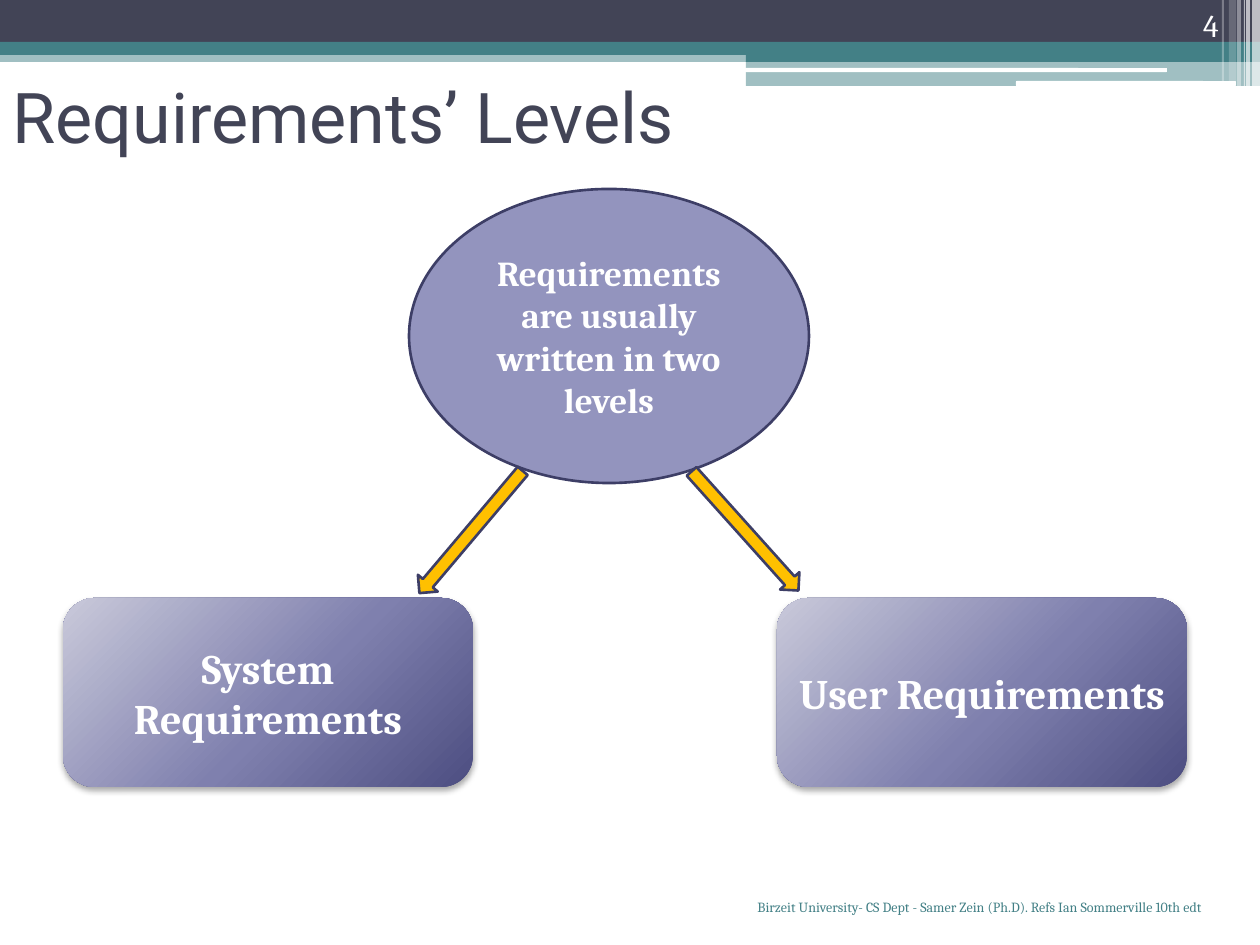
"""Build the slide that introduces the two levels of requirements."""
from typing import NamedTuple, Optional

from lxml import etree
from pptx import Presentation
from pptx import util as u
from pptx.dml.color import RGBColor
from pptx.enum import shapes, text
from pptx.oxml import parse_xml
from pptx.oxml.ns import nsdecls, qn

PX = 914400 / 126
COLORS = {
    "ink": "424456", "teal": "438086", "white": "FFFFFF", "lilac": "9394BE",
    "outline": "3D3E66", "amber": "FFC000", "shadow": "000000",
    "light": "C9C9DA", "middle": "7F80AE", "dark": "4D4E81",
}
KIND = shapes.MSO_SHAPE
ALIGN = text.PP_ALIGN
ANCHOR = text.MSO_ANCHOR


class Area(NamedTuple):
    left: int
    top: int
    width: int
    height: int


class Band(NamedTuple):
    area: Area
    color: str
    opacity: int = 100
    kind: KIND = KIND.RECTANGLE


class Arrow(NamedTuple):
    area: Area
    rotation: float


class Level(NamedTuple):
    left: int
    label: str


BANDS = [
    Band(Area(0, 50, 1260, 12), "teal", 50),
    Band(Area(0, 0, 1260, 42), "ink"),
    Band(Area(0, 42, 1260, 13), "teal"),
    Band(Area(746, 49, 514, 13), "teal"),
    Band(Area(746, 61, 514, 25), "teal", 50),
    Band(Area(745, 68, 422, 4), "white", kind=KIND.ROUNDED_RECTANGLE),
    Band(Area(1016, 81, 220, 5), "white", kind=KIND.ROUNDED_RECTANGLE),
    Band(Area(1252, 0, 8, 86), "white", 65),
    Band(Area(1246, 0, 4, 86), "white", 65),
    Band(Area(1244, 0, 1, 86), "white", 60),
    Band(Area(1237, 0, 4, 86), "white", 40),
    Band(Area(1229, 0, 7, 81), "white", 20),
    Band(Area(1222, 0, 2, 81), "white", 30),
]
ARROWS = [Arrow(Area(391, 519, 160, 26), 130.2),
          Arrow(Area(665, 518, 160, 26), 48.1)]
LEVELS = [Level(63, "System Requirements"), Level(777, "User Requirements")]
STOPS = [(0, "light"), (55, "middle"), (100, "dark")]


def emu(area: Area) -> list:
    return [u.Emu(round(length * PX)) for length in area]


def rgb(name: str) -> RGBColor:
    return RGBColor.from_string(COLORS[name])


def write(box, content: str, *, size: int, color: str = "white",
          font: str = "Cambria", bold: bool = False, align=ALIGN.CENTER,
          anchor=ANCHOR.MIDDLE) -> None:
    frame = box.text_frame
    frame.word_wrap = True
    frame.auto_size = text.MSO_AUTO_SIZE.NONE
    frame.vertical_anchor = anchor
    para = frame.paragraphs[0]
    para.alignment = align
    span = para.add_run()
    span.text = content
    span.font.name = font
    span.font.size = u.Pt(size)
    span.font.bold = bold
    span.font.color.rgb = rgb(color)


def add_shape(page, kind, area: Area, fill: str, line: Optional[str] = None):
    shape = page.shapes.add_shape(kind, *emu(area))
    shape.shadow.inherit = False
    shape.fill.solid()
    shape.fill.fore_color.rgb = rgb(fill)
    if line:
        shape.line.color.rgb = rgb(line)
        shape.line.width = u.Pt(1.5)
    else:
        shape.line.fill.background()
    return shape


def add_band(page, band: Band) -> None:
    shape = add_shape(page, band.kind, band.area, band.color)
    if band.opacity < 100:
        color = shape.element.spPr.find(qn("a:solidFill")).find(qn("a:srgbClr"))
        etree.SubElement(color, qn("a:alpha"), val=str(band.opacity * 1000))


def add_arrow(page, arrow: Arrow) -> None:
    shape = add_shape(page, KIND.RIGHT_ARROW, arrow.area, "amber", "outline")
    shape.rotation = arrow.rotation


def add_level(page, level: Level) -> None:
    shape = add_shape(page, KIND.ROUNDED_RECTANGLE,
                      Area(level.left, 598, 410, 189), "middle")
    stops = "".join(
        f'<a:gs pos="{place * 1000}"><a:srgbClr val="{COLORS[name]}"/></a:gs>'
        for place, name in STOPS)
    gradient = parse_xml(
        f'<a:gradFill {nsdecls("a")} rotWithShape="1"><a:gsLst>{stops}</a:gsLst>'
        '<a:path path="circle"><a:fillToRect l="-40000" t="-90000" '
        'r="140000" b="190000"/></a:path></a:gradFill>')
    shadow = parse_xml(
        f'<a:outerShdw {nsdecls("a")} blurRad="{u.Pt(3.5)}" dist="{u.Pt(2.2)}" '
        'dir="5400000" algn="ctr" rotWithShape="0">'
        f'<a:srgbClr val="{COLORS["shadow"]}"><a:alpha val="32000"/></a:srgbClr>'
        '</a:outerShdw>')
    properties = shape.element.spPr
    properties.replace(properties.find(qn("a:solidFill")), gradient)
    properties.find(qn("a:effectLst")).append(shadow)
    write(shape, level.label, size=24, bold=True)


def add_label(page, area: Area, content: str, **style) -> None:
    box = page.shapes.add_textbox(*emu(area))
    write(box, content, align=ALIGN.RIGHT, **style)


def main() -> None:
    deck = Presentation()
    deck.slide_width, deck.slide_height = u.Inches(10), u.Inches(7.5)
    page = deck.slides.add_slide(deck.slide_layouts[5])
    for band in BANDS:
        add_band(page, band)

    title = page.shapes.title
    title.left, title.top, title.width, title.height = emu(Area(0, 42, 1134, 147))
    write(title, "Requirements’ Levels", size=40, color="ink", font="Roboto",
          align=ALIGN.LEFT)

    topic = add_shape(page, KIND.OVAL, Area(409, 189, 400, 294), "lilac", "outline")
    write(topic, "Requirements are usually written in two levels", size=20, bold=True)
    for level in LEVELS:
        add_level(page, level)
    for arrow in ARROWS:
        add_arrow(page, arrow)

    add_label(page, Area(658, 892, 557, 32),
              "Birzeit University- CS Dept - Samer Zein (Ph.D). "
              "Refs Ian Sommerville 10th edt",
              size=8, color="teal", anchor=ANCHOR.TOP)
    add_label(page, Area(1126, 0, 105, 50), "4", size=18, anchor=ANCHOR.BOTTOM)
    deck.save("out.pptx")


if __name__ == "__main__":
    main()
